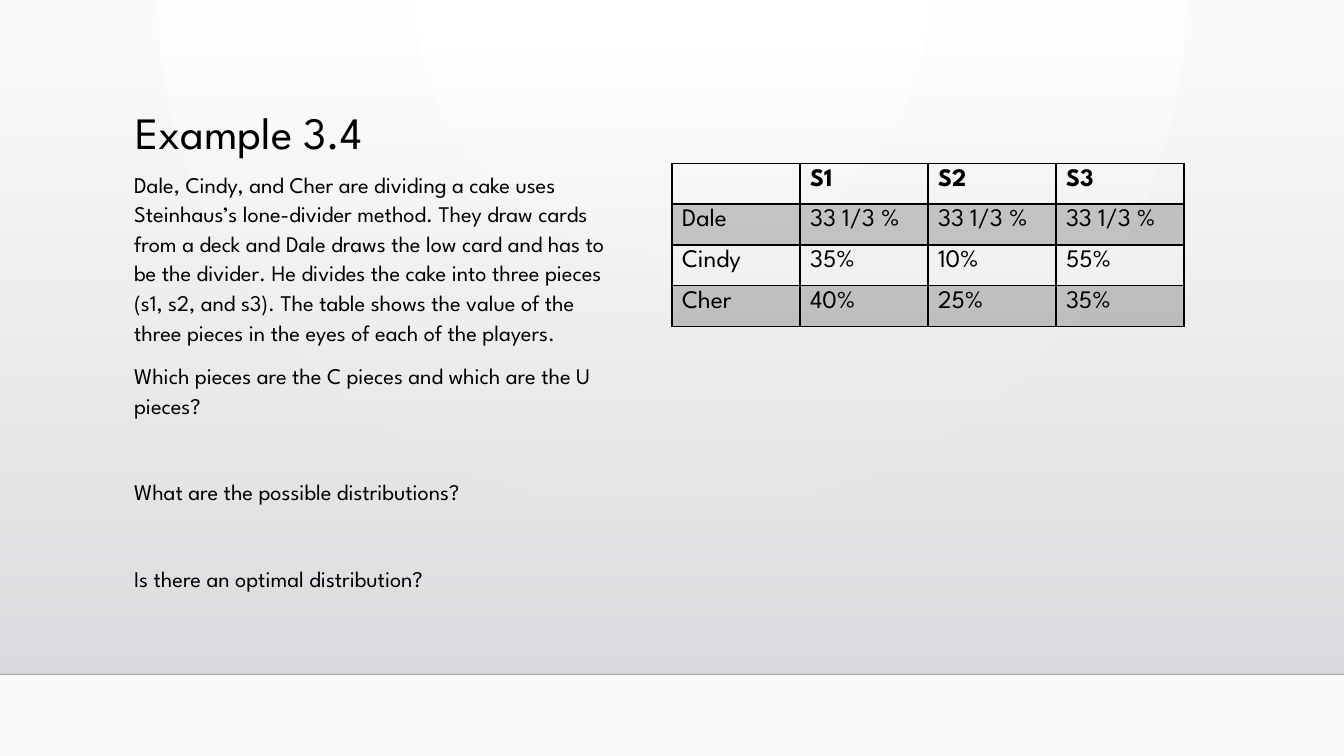
from dataclasses import dataclass

from lxml.etree import SubElement as Sub
from pptx import Presentation
from pptx.dml.color import RGBColor as Rgb
from pptx.enum.shapes import MSO_CONNECTOR as Conn, MSO_SHAPE as Form
from pptx.enum.text import MSO_ANCHOR as Anchor, MSO_AUTO_SIZE as Fit, PP_ALIGN as Align
from pptx.oxml import parse_xml
from pptx.oxml.ns import nsdecls, qn
from pptx.util import Inches, Pt

FONT = "League Spartan"
BLACK = Rgb(0, 0, 0)
WHITE = Rgb(255, 255, 255)
PALE = Rgb(0xFA, 0xFA, 0xFA)
MIST = Rgb(0xDC, 0xDC, 0xE0)
HAZE = Rgb(0xDE, 0xDE, 0xE2)
WIDE, HIGH = Inches(13.33), Inches(7.5)


@dataclass
class Box:
    """Place and size, in percent of the slide's width and height."""
    left: float
    top: float
    width: float
    height: float

    def frame(self) -> tuple:
        return (int(WIDE * self.left / 100), int(HIGH * self.top / 100),
                int(WIDE * self.width / 100), int(HIGH * self.height / 100))


@dataclass
class Para:
    text: str
    before: float


BAND = Box(0, 6.8, 100, 82.4)
HEAD = Box(9.3, 14, 78.75, 15.47)
BODY = Box(9.23, 21.6, 38.1, 68)
GRID = Box(50, 21.6, 38.1, 21.6)

PARAS = [
    Para("Dale, Cindy, and Cher are dividing a cake uses Steinhaus’s lone-divider "
         "method. They draw cards from a deck and Dale draws the low card and has to "
         "be the divider. He divides the cake into three pieces (s1, s2, and s3). The "
         "table shows the value of the three pieces in the eyes of each of the players.", 0),
    Para("Which pieces are the C pieces and which are the U pieces?", 10),
    Para("What are the possible distributions?", 41),
    Para("Is there an optimal distribution?", 41),
]
SHARES = [
    ["", "S1", "S2", "S3"],
    ["Dale", "33 1/3 %", "33 1/3 %", "33 1/3 %"],
    ["Cindy", "35%", "10%", "55%"],
    ["Cher", "40%", "25%", "35%"],
]


def fade(color, share: int) -> None:
    Sub(color, qn("a:alpha"), val=str(share * 1000))


def blend(fill, first: Rgb, last: Rgb) -> None:
    fill.gradient()
    for stop, color in zip(fill.gradient_stops, (first, last)):
        stop.color.rgb = color


def write(para, text: str, size: int, bold: bool = False) -> None:
    run = para.add_run()
    run.text = text
    font = run.font
    font.name, font.size, font.bold = FONT, Pt(size), bold
    font.color.rgb = BLACK


def place(shape, box: Box):
    shape.left, shape.top, shape.width, shape.height = box.frame()
    frame = shape.text_frame
    frame.word_wrap = True
    frame.auto_size = Fit.NONE
    frame.vertical_anchor = Anchor.TOP
    return frame


def paint(slide) -> None:
    # Round glow from the top centre
    blend(slide.background.fill, WHITE, PALE)
    glow = slide._element.xpath("./p:cSld/p:bg//a:gradFill")[0]
    for line in glow.findall(qn("a:lin")):
        glow.remove(line)
    glow.append(parse_xml(
        f'<a:path {nsdecls("a")} path="circle">'
        '<a:fillToRect l="43000" t="0" r="43000" b="100000"/></a:path>'))

    # Band that darkens downwards, behind the text
    band = slide.shapes.add_shape(Form.RECTANGLE, *BAND.frame())
    band.shadow.inherit = False
    band.line.fill.background()
    blend(band.fill, MIST, HAZE)
    band.fill.gradient_angle = 270
    fade(band._element.xpath(".//a:gs/a:srgbClr")[0], 0)

    # Floor line
    floor = int(HIGH * (BAND.top + BAND.height) / 100)
    edge = slide.shapes.add_connector(Conn.STRAIGHT, 0, floor, WIDE, floor)
    edge.line.width = Pt(1)
    edge.line.color.rgb = BLACK
    fade(edge._element.xpath(".//a:ln//a:srgbClr")[0], 20)
    Sub(edge._element.spPr, qn("a:effectLst"))

    tree = slide.shapes._spTree
    for spot, part in enumerate((band, edge), 2):
        tree.insert(spot, part._element)


def border(cell, base: int) -> None:
    props = cell._tc.get_or_add_tcPr()
    for spot, side in enumerate("LRTB"):
        width = Pt(base if side == "B" else 1)
        props.insert(spot, parse_xml(
            f'<a:ln{side} {nsdecls("a")} w="{width}"><a:solidFill>'
            f'<a:srgbClr val="{BLACK}"/></a:solidFill></a:ln{side}>'))


def tabulate(slide) -> None:
    rows, cols = len(SHARES), len(SHARES[0])
    table = slide.shapes.add_table(rows, cols, *GRID.frame()).table
    table.first_row = table.horz_banding = False
    for r, row in enumerate(SHARES):
        for c, text in enumerate(row):
            cell = table.cell(r, c)
            if r % 2:
                cell.fill.solid()
                cell.fill.fore_color.rgb = BLACK
                fade(cell._tc.xpath("./a:tcPr/a:solidFill/a:srgbClr")[0], 20)
            else:
                cell.fill.background()
            border(cell, 1 if r else 2)
            if text:
                write(cell.text_frame.paragraphs[0], text, 18, r == 0)


def main() -> None:
    deck = Presentation()
    deck.slide_width, deck.slide_height = WIDE, HIGH
    slide = deck.slides.add_slide(deck.slide_layouts[1])
    paint(slide)

    # Title
    para = place(slide.shapes.title, HEAD).paragraphs[0]
    para.alignment, para.line_spacing = Align.LEFT, 0.9
    write(para, "Example 3.4", 32)

    # Questions
    frame = place(slide.placeholders[1], BODY)
    for spot, item in enumerate(PARAS):
        para = frame.add_paragraph() if spot else frame.paragraphs[0]
        props = para._p.get_or_add_pPr()
        props.set("marL", "0")
        props.set("indent", "0")
        Sub(props, qn("a:buNone"))
        para.alignment, para.line_spacing = Align.LEFT, 1.1
        para.space_before = Pt(item.before)
        write(para, item.text, 16)

    # Values of the pieces
    tabulate(slide)
    deck.save("out.pptx")


if __name__ == "__main__":
    main()
